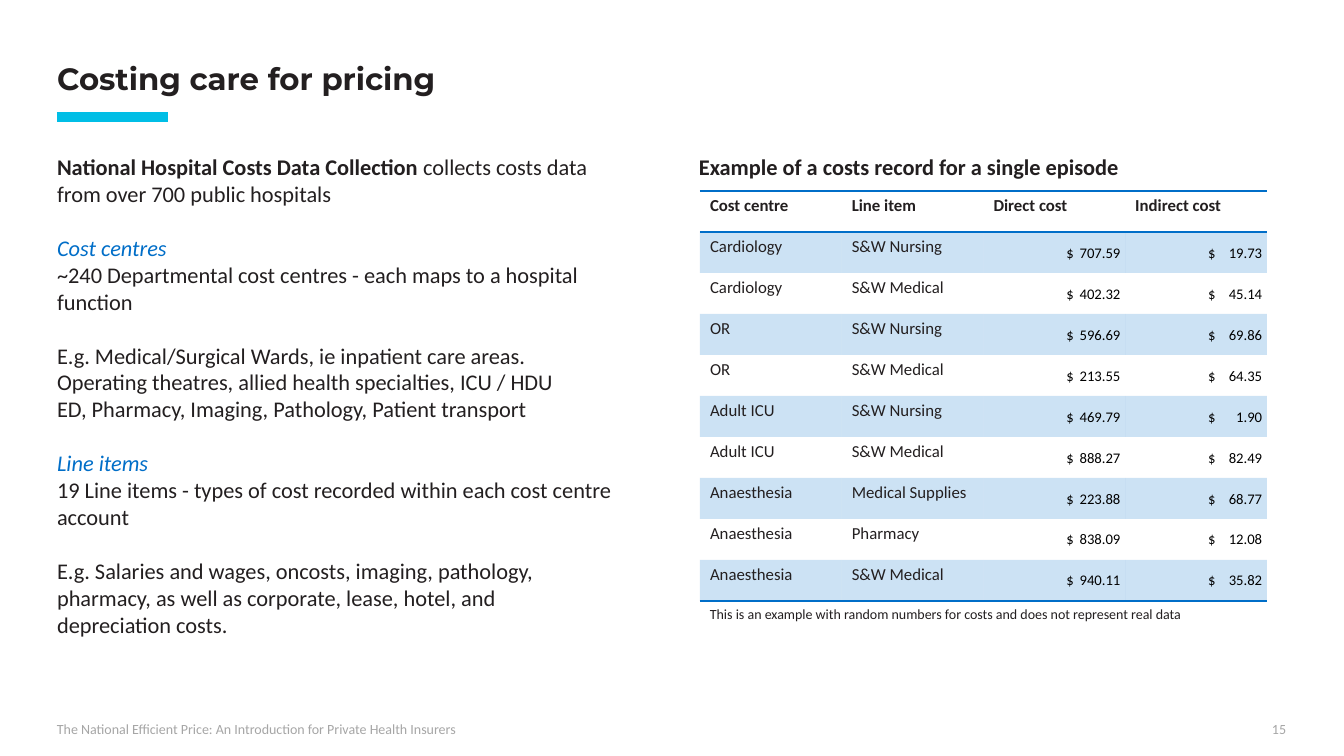
from lxml.etree import SubElement
from pptx import Presentation
from pptx.dml.color import RGBColor
from pptx.enum.shapes import MSO_CONNECTOR
from pptx.enum.text import MSO_ANCHOR, MSO_AUTO_SIZE, PP_ALIGN
from pptx.oxml.ns import qn
from pptx.util import Emu, Pt

INK, BLUE, CYAN, GREY, BLACK = "231F20", "006EC8", "00BEE6", "A6A6A6", "000000"


def px(length):
    """Turn pixels (100.8 to the inch) into EMU."""
    return Emu(round(length * 914400 / 100.8))


def write(paragraph, text, size, color=INK, **styles):
    """Add a run to the paragraph; styles are further font attributes."""
    run = paragraph.add_run()
    run.text = text
    run.font.color.rgb = RGBColor.from_string(color)
    for name, value in {"name": "Calibri", "size": Pt(size), "bold": False, **styles}.items():
        setattr(run.font, name, value)


presentation = Presentation()
presentation.slide_width, presentation.slide_height = px(1344), px(756)
slide = presentation.slides.add_slide(presentation.slide_layouts[1])
title, body = slide.placeholders

# Title and accent line
title_format = {"left": px(47), "top": px(47), "width": px(1249), "height": px(50)}
for name, value in title_format.items():
    setattr(title, name, value)
frame_format = {"auto_size": MSO_AUTO_SIZE.NONE, "vertical_anchor": MSO_ANCHOR.BOTTOM,
                "margin_bottom": 0, "word_wrap": True}
for name, value in frame_format.items():
    setattr(title.text_frame, name, value)
paragraph = title.text_frame.paragraphs[0]
paragraph.alignment = PP_ALIGN.LEFT
paragraph.line_spacing = 0.9
write(paragraph, "Costing care for pricing", 22, name="Montserrat", bold=True)

accent = slide.shapes.add_connector(MSO_CONNECTOR.STRAIGHT, px(57), px(117), px(168), px(117))
accent.line.color.rgb = RGBColor.from_string(CYAN)
accent.line.width = Pt(7)
SubElement(accent.element.spPr, qn("a:effectLst"))

# Explanation: each block is a list of paragraphs, each paragraph a list of runs
heading = {"color": BLUE, "italic": True}
blocks = [
    [[("National Hospital Costs Data Collection ", {"bold": True}),
      ("collects costs data from over 700 public hospitals", {})]],
    [[("Cost centres", heading)],
     [("~240 Departmental cost centres - each maps to a hospital function", {})]],
    [[("E.g. Medical/Surgical Wards, ie inpatient care areas.", {})],
     [("Operating theatres, allied health specialties, ICU / HDU", {})],
     [("ED, Pharmacy, Imaging, Pathology, Patient transport", {})]],
    [[("Line items", heading)],
     [("19 Line items - types of cost recorded within each cost centre account", {})]],
    [[("E.g. Salaries and wages, oncosts, imaging, pathology, pharmacy, as well as "
       "corporate, lease, hotel, and depreciation costs.", {})]],
]
body_format = {"left": px(47), "top": px(148), "width": px(576), "height": px(520)}
for name, value in body_format.items():
    setattr(body, name, value)
body.text_frame.auto_size = MSO_AUTO_SIZE.NONE
body.text_frame.word_wrap = True
paragraph = body.text_frame.paragraphs[0]
for block_index, block in enumerate(blocks):
    for line_index, runs in enumerate(block):
        if block_index or line_index:
            paragraph = body.text_frame.add_paragraph()
        properties = paragraph._p.get_or_add_pPr()
        properties.set("marL", "0")
        properties.set("indent", "0")
        SubElement(properties, qn("a:buNone"))
        paragraph.space_before = Pt(19.4 if block_index and not line_index else 0)
        for text, styles in runs:
            write(paragraph, text, 16, **styles)

# Costs table
headers = ["Cost centre", "Line item", "Direct cost", "Indirect cost"]
records = [
    ("Cardiology", "S&W Nursing", "707.59", "19.73"),
    ("Cardiology", "S&W Medical", "402.32", "45.14"),
    ("OR", "S&W Nursing", "596.69", "69.86"),
    ("OR", "S&W Medical", "213.55", "64.35"),
    ("Adult ICU", "S&W Nursing", "469.79", "1.90"),
    ("Adult ICU", "S&W Medical", "888.27", "82.49"),
    ("Anaesthesia", "Medical Supplies", "223.88", "68.77"),
    ("Anaesthesia", "Pharmacy", "838.09", "12.08"),
    ("Anaesthesia", "S&W Medical", "940.11", "35.82"),
]
rows = [headers, *records]
table_frame = slide.shapes.add_table(len(rows), len(headers), px(700), px(191), px(567), px(410))
table_frame.element.find(".//" + qn("a:tableStyleId")).text = "{2D5ABB26-0587-4C30-8999-92F81FD0307C}"
table = table_frame.table
table.horz_banding = False
for row in table.rows:
    row.height = px(41)

for row_index, values in enumerate(rows):
    edges = {0: ["a:lnT", "a:lnB"], len(records): ["a:lnB"]}.get(row_index, [])
    for column_index, value in enumerate(values):
        cell = table.cell(row_index, column_index)
        cell_properties = cell._tc.get_or_add_tcPr()
        for edge in edges:
            border = SubElement(cell_properties, qn(edge), w=str(Pt(1)))
            SubElement(SubElement(border, qn("a:solidFill")), qn("a:srgbClr"), val=BLUE)
        if row_index % 2:
            cell.fill.solid()
            cell.fill.fore_color.rgb = RGBColor.from_string(BLUE)
            tint = cell_properties.find(qn("a:solidFill")).find(qn("a:srgbClr"))
            SubElement(tint, qn("a:alpha"), val="20000")
        else:
            cell.fill.background()

        paragraph = cell.text_frame.paragraphs[0]
        if row_index and column_index > 1:
            cell_format = {"vertical_anchor": MSO_ANCHOR.MIDDLE, "margin_left": px(83),
                           "margin_right": px(1), "margin_top": px(1), "margin_bottom": 0}
            for name, setting in cell_format.items():
                setattr(cell, name, setting)
            tabs = SubElement(paragraph._p.get_or_add_pPr(), qn("a:tabLst"))
            SubElement(tabs, qn("a:tab"), pos=str(px(54)), algn="r")
            write(paragraph, f"$\t{value}", 10.5, BLACK)
        else:
            write(paragraph, value, 12, bold=row_index == 0)

# Caption, note, footer and slide number
labels = [
    ("Example of a costs record for a single episode", (689, 148, 550, 37), 16, INK, True, PP_ALIGN.LEFT),
    ("This is an example with random numbers for costs and does not represent real data",
     (700, 601, 521, 27), 10, INK, False, PP_ALIGN.LEFT),
    ("The National Efficient Price: An Introduction for Private Health Insurers",
     (47, 716, 815, 27), 10, GREY, False, PP_ALIGN.LEFT),
    ("15", (994, 716, 302, 27), 10, GREY, False, PP_ALIGN.RIGHT),
]
for text, box, size, color, bold, alignment in labels:
    label = slide.shapes.add_textbox(*map(px, box))
    label.text_frame.word_wrap = True
    paragraph = label.text_frame.paragraphs[0]
    paragraph.alignment = alignment
    write(paragraph, text, size, color, bold=bold)

presentation.save("out.pptx")
